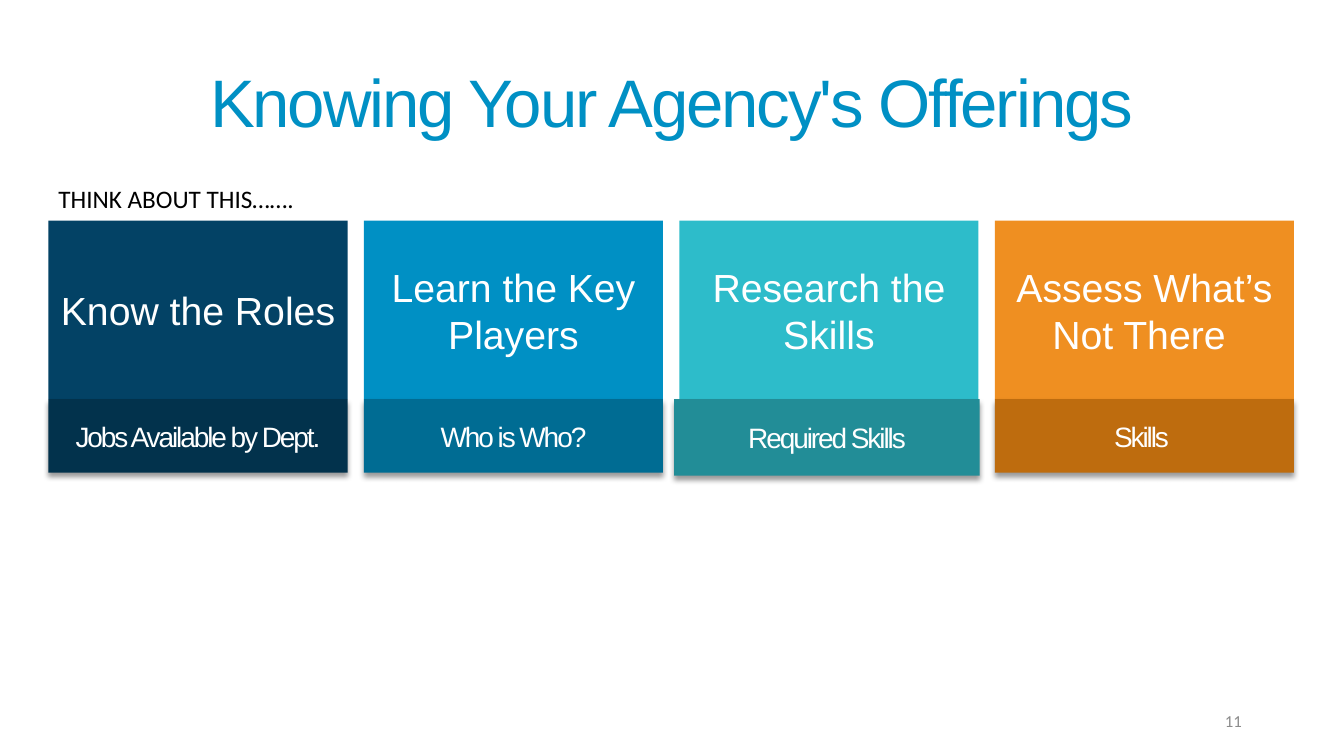
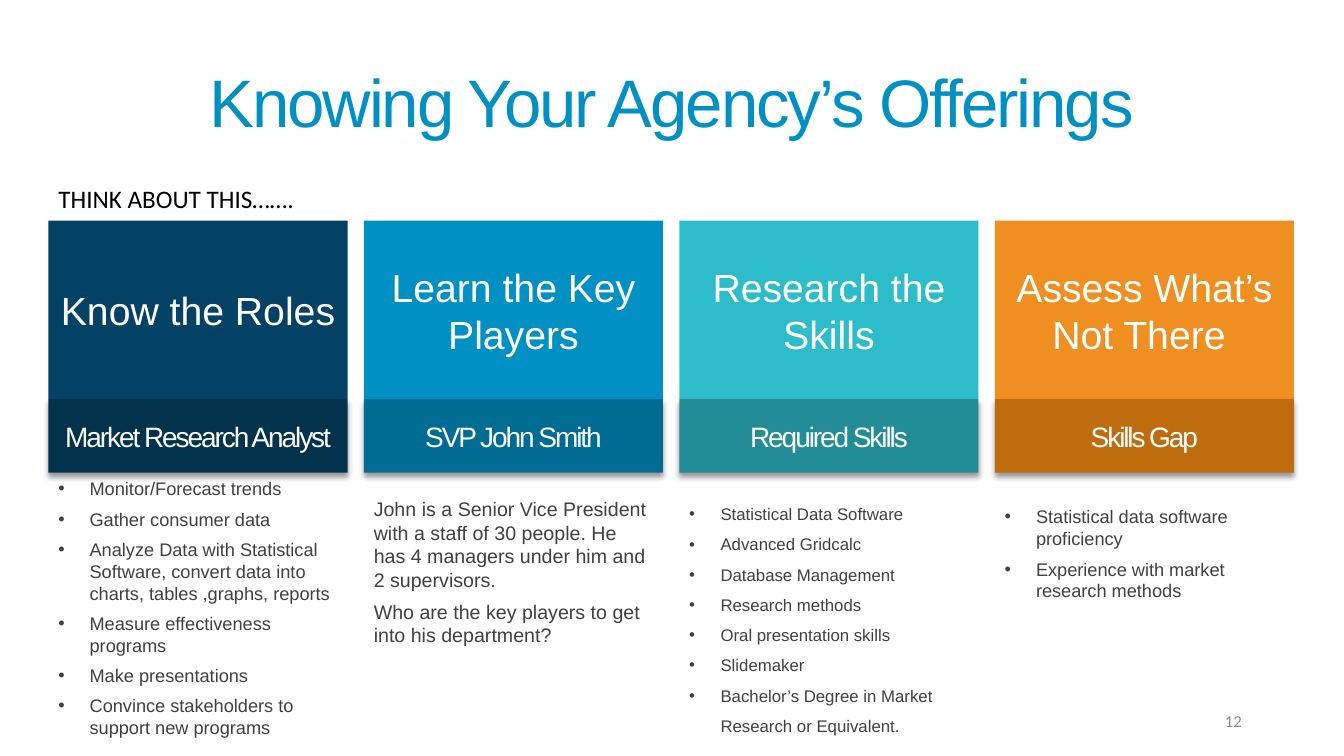
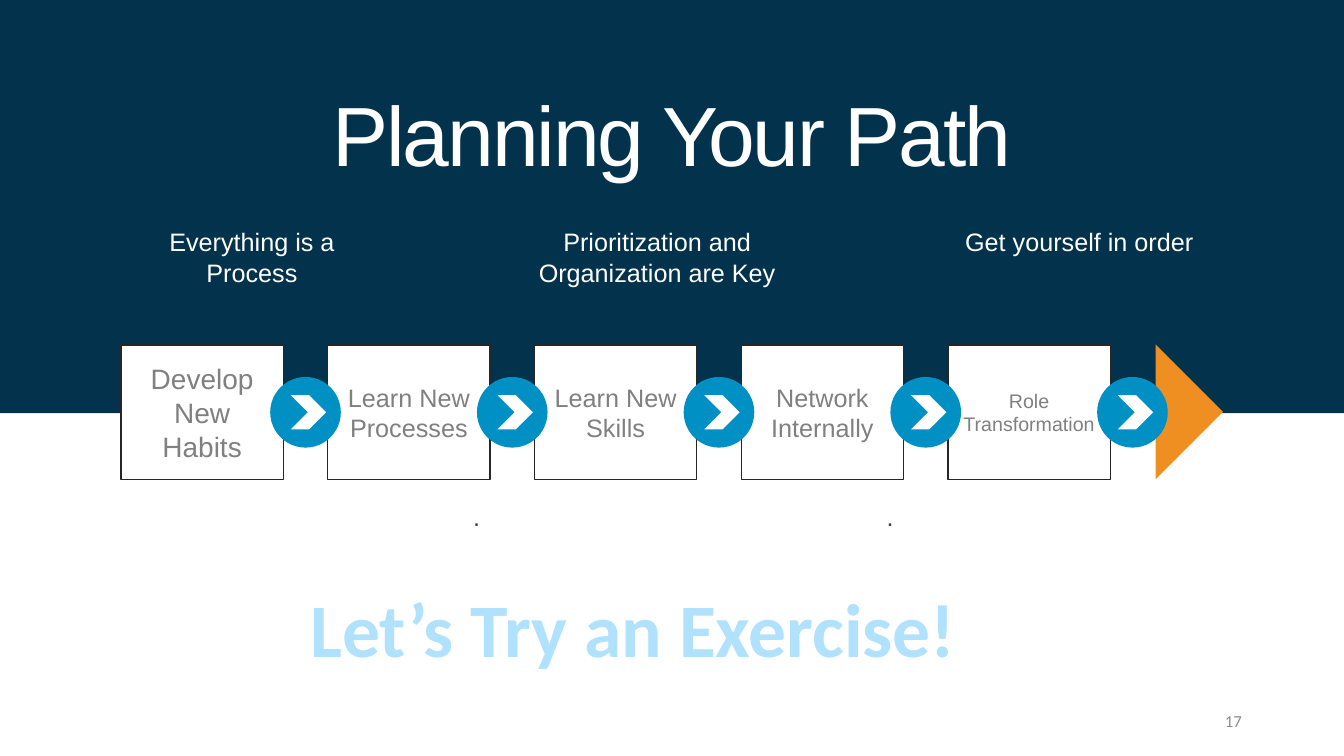
from dataclasses import dataclass
from typing import NamedTuple

from lxml.etree import SubElement
from pptx import Presentation
from pptx.dml.color import RGBColor
from pptx.enum.shapes import MSO_SHAPE
from pptx.enum.text import MSO_ANCHOR, MSO_AUTO_SIZE, PP_ALIGN
from pptx.oxml.ns import qn
from pptx.shapes.autoshape import Shape
from pptx.slide import Slide
from pptx.util import Cm, Pt


@dataclass(frozen=True)
class Theme:
    sans: str = "Arial"
    humanist: str = "Calibri"
    white: str = "FFFFFF"
    black: str = "000000"
    blue: str = "0090C4"
    midnight: str = "02324C"
    orange: str = "EF8F21"
    pale_blue: str = "B0E1FD"
    body: str = "404040"
    muted: str = "808080"
    page: str = "8C8C8C"
    outline: str = "262626"
    card_colors: tuple[str, ...] = ("034265", "0090C4", "2DBCCA", "EF8F21")
    band_colors: tuple[str, ...] = ("02324C", "006C93", "228D97", "BE6C0E")
    title_size: float = 48
    hero_size: float = 60
    call_size: float = 54
    card_size: float = 28
    band_size: float = 20
    lead_size: float = 18
    page_size: float = 12
    tight: float = -1.5


THEME = Theme()


class Box(NamedTuple):
    left: float
    top: float
    width: float
    height: float


@dataclass(frozen=True)
class Style:
    size: float
    color: str
    font: str = THEME.sans
    align: PP_ALIGN = PP_ALIGN.LEFT
    tracking: float = 0
    bold: bool = False
    space_after: float = 0
    line_spacing: float = 1.0
    bullet: bool = False


class Detail(NamedTuple):
    top: float
    height: float
    style: Style
    lines: tuple[str, ...]


class Offering(NamedTuple):
    title: str
    page: int
    bands: tuple[str, ...]
    band_boxes: tuple[Box, ...]
    details: tuple[Detail, ...] = ()


class Step(NamedTuple):
    label: str
    size: float


CENTER = PP_ALIGN.CENTER
TITLE = Style(THEME.title_size, THEME.blue, align=CENTER, tracking=THEME.tight)
HERO = Style(THEME.hero_size, THEME.white, align=CENTER, tracking=THEME.tight)
CARD = Style(THEME.card_size, THEME.white, align=CENTER)
BAND = Style(THEME.band_size, THEME.white, align=CENTER, tracking=THEME.tight)
PROMPT = Style(THEME.lead_size, THEME.black, THEME.humanist)
PAGE = Style(THEME.page_size, THEME.page, THEME.humanist, PP_ALIGN.RIGHT)
THOUGHT = Style(THEME.lead_size, THEME.white, align=CENTER)
DOT = Style(THEME.lead_size, THEME.body, align=PP_ALIGN.RIGHT)
CALL = Style(THEME.call_size, THEME.pale_blue, THEME.humanist, CENTER, bold=True)
DUTY = Style(13, THEME.body, space_after=6, bullet=True)
STORY = Style(14, THEME.body, space_after=6)
SKILL = Style(12, THEME.body, line_spacing=1.5, bullet=True)

SLIDE_WIDTH, SLIDE_HEIGHT = 33.87, 19.05
TITLE_LEFT, TITLE_WIDTH = 3.73, 26.4
COLUMN_LEFT, COLUMN_PITCH, COLUMN_WIDTH = 1.22, 7.95, 7.54
CARD_TOP, CARD_HEIGHT, BAND_HEIGHT = 5.56, 4.5, 1.85
STEP_LEFT, STEP_PITCH, STEP_WIDTH = 3.05, 5.21, 4.09
STEP_TOP, STEP_HEIGHT = 8.69, 3.4
THOUGHT_WIDTH = 6.6

CARDS = (
    "Know the Roles",
    "Learn the Key Players",
    "Research the Skills",
    "Assess What’s Not There ",
)


def column_box(column: int, top: float, height: float) -> Box:
    return Box(COLUMN_LEFT + column * COLUMN_PITCH, top, COLUMN_WIDTH, height)


BAND_BOXES = tuple(
    column_box(column, CARD_TOP + CARD_HEIGHT, BAND_HEIGHT)
    for column in range(len(CARDS))
)

OFFERINGS = (
    Offering(
        "Knowing Your Agency's Offerings",
        11,
        ("Jobs Available by Dept.", "Who is Who?", "Required Skills", "Skills "),
        (*BAND_BOXES[:2], Box(16.99, 10.06, 7.7, 1.93), BAND_BOXES[3]),
    ),
    Offering(
        "Knowing Your Agency’s Offerings",
        12,
        ("Market Research Analyst", "SVP John Smith", "Required Skills", "Skills Gap"),
        BAND_BOXES,
        (
            Detail(11.91, 8.25, DUTY, (
                "Monitor/Forecast trends",
                "Gather consumer data",
                "Analyze Data with Statistical Software, convert data into "
                "charts, tables ,graphs, reports",
                "Measure effectiveness programs",
                "Make presentations",
                "Convince stakeholders to support new programs",
            )),
            Detail(12.4, 4.06, STORY, (
                "John is a Senior Vice President with a staff of 30 people. "
                "He has 4 managers under him and 2 supervisors.",
                "Who are the key players to get into his department?",
            )),
            Detail(12.32, 6.32, SKILL, (
                "Statistical Data Software",
                "Advanced Gridcalc",
                "Database Management",
                "Research methods",
                "Oral presentation skills",
                "Slidemaker",
                "Bachelor’s Degree in Market Research or Equivalent.",
            )),
            Detail(12.62, 2.69, DUTY, (
                "Statistical data software proficiency",
                "Experience with market research methods",
            )),
        ),
    ),
)

STEPS = (
    Step("Develop New Habits", 20),
    Step("Learn New Processes", 18),
    Step("Learn New Skills", 18),
    Step("Network Internally", 18),
    Step("Role Transformation", 14),
)

THOUGHTS = (
    ("Everything is a Process", Box(3.05, 5.59, THOUGHT_WIDTH, 1.8)),
    ("Prioritization and Organization are Key", Box(13.26, 5.59, THOUGHT_WIDTH, 1.8)),
    ("Get yourself in order", Box(23.9, 5.59, THOUGHT_WIDTH, 1.02)),
)


def apply(target: object, values: dict[str, object]) -> None:
    for name, value in values.items():
        setattr(target, name, value)


def write(shape: Shape, lines: tuple[str, ...], style: Style) -> None:
    frame = shape.text_frame
    for index, line in enumerate(lines):
        paragraph = frame.paragraphs[0] if index == 0 else frame.add_paragraph()
        apply(paragraph, {
            "alignment": style.align,
            "space_after": Pt(style.space_after),
            "line_spacing": style.line_spacing,
        })
        if style.bullet:
            properties = paragraph._p.get_or_add_pPr()
            properties.set("marL", str(Cm(0.79)))
            properties.set("indent", str(Cm(-0.79)))
            SubElement(properties, qn("a:buFont"), typeface=THEME.sans)
            SubElement(properties, qn("a:buChar"), char="•")
        run = paragraph.add_run()
        run.text = line
        apply(run.font, {
            "name": style.font,
            "size": Pt(style.size),
            "bold": style.bold,
        })
        run.font.color.rgb = RGBColor.from_string(style.color)
        if style.tracking:
            run._r.get_or_add_rPr().set("spc", str(round(style.tracking * 100)))


def add_text(
    slide: Slide,
    box: Box,
    lines: tuple[str, ...],
    style: Style,
    wrap: bool = True,
    anchor: MSO_ANCHOR = MSO_ANCHOR.TOP,
    fit: MSO_AUTO_SIZE = MSO_AUTO_SIZE.SHAPE_TO_FIT_TEXT,
) -> None:
    area = slide.shapes.add_textbox(*map(Cm, box))
    apply(area.text_frame, {
        "word_wrap": wrap,
        "vertical_anchor": anchor,
        "auto_size": fit,
    })
    write(area, lines, style)


def add_block(
    slide: Slide,
    box: Box,
    fill: str,
    kind: MSO_SHAPE = MSO_SHAPE.RECTANGLE,
    outline: str | None = None,
) -> Shape:
    block = slide.shapes.add_shape(kind, *map(Cm, box))
    block.shadow.inherit = False
    block.fill.solid()
    block.fill.fore_color.rgb = RGBColor.from_string(fill)
    if outline:
        block.line.width = Pt(1)
        block.line.color.rgb = RGBColor.from_string(outline)
    else:
        block.line.fill.background()
    return block


def add_label(block: Shape, label: str, style: Style) -> None:
    apply(block.text_frame, {
        "word_wrap": True,
        "vertical_anchor": MSO_ANCHOR.MIDDLE,
    })
    write(block, (label,), style)


def cast_shadow(block: Shape) -> None:
    effects = block._element.spPr.find(qn("a:effectLst"))
    shadow = SubElement(
        effects, qn("a:outerShdw"), blurRad=str(Pt(4)), dist=str(Pt(3)),
        dir="5400000", algn="t", rotWithShape="0",
    )
    color = SubElement(shadow, qn("a:srgbClr"), val=THEME.black)
    SubElement(color, qn("a:alpha"), val="40000")


def add_page_number(slide: Slide, page: int) -> None:
    add_text(
        slide, Box(23.93, 17.65, 7.62, 1.02), (str(page),), PAGE,
        anchor=MSO_ANCHOR.MIDDLE, fit=MSO_AUTO_SIZE.NONE,
    )


def draw_offering(slide: Slide, offering: Offering) -> None:
    for column, (card, color) in enumerate(zip(CARDS, THEME.card_colors)):
        box = column_box(column, CARD_TOP, CARD_HEIGHT)
        add_label(add_block(slide, box, color), card, CARD)
    for band, box, color in zip(
        offering.bands, offering.band_boxes, THEME.band_colors
    ):
        block = add_block(slide, box, color)
        cast_shadow(block)
        add_label(block, band, BAND)
    for column, detail in enumerate(offering.details):
        box = column_box(column, detail.top, detail.height)
        add_text(slide, box, detail.lines, detail.style)
    add_text(slide, Box(TITLE_LEFT, 1.4, TITLE_WIDTH, 2.31), (offering.title,), TITLE)
    add_text(slide, Box(1.22, 4.5, 6.96, 1.02), ("THINK ABOUT THIS…….",), PROMPT)
    add_page_number(slide, offering.page)


def draw_path(slide: Slide) -> None:
    add_block(slide, Box(0, 0, SLIDE_WIDTH, 10.41), THEME.midnight)
    add_text(
        slide, Box(TITLE_LEFT, 1.96, TITLE_WIDTH, 2.82), ("Planning Your Path",), HERO
    )
    goal = add_block(
        slide, Box(28.27, 9.53, 3.4, 1.7), THEME.orange, MSO_SHAPE.ISOSCELES_TRIANGLE
    )
    goal.rotation = 90
    lefts = [STEP_LEFT + index * STEP_PITCH for index in range(len(STEPS))]
    for left, step in zip(lefts, STEPS):
        box = Box(left, STEP_TOP, STEP_WIDTH, STEP_HEIGHT)
        block = add_block(slide, box, THEME.white, outline=THEME.outline)
        add_label(block, step.label, Style(step.size, THEME.muted, align=CENTER))
    for left in lefts:
        add_block(
            slide, Box(left + 3.76, 9.5, 1.78, 1.78), THEME.blue, MSO_SHAPE.OVAL
        )
        add_block(
            slide, Box(left + 4.28, 9.96, 0.89, 0.86), THEME.white, MSO_SHAPE.CHEVRON
        )
    for left in lefts[1::2]:
        dot_left = left + STEP_WIDTH - THOUGHT_WIDTH
        add_text(slide, Box(dot_left, 12.5, THOUGHT_WIDTH, 1.02), (".",), DOT)
    for thought, box in THOUGHTS:
        add_text(slide, box, (thought,), THOUGHT)
    add_text(
        slide, Box(7.49, 14.53, 17.37, 2.57), ("Let’s Try an Exercise! ",), CALL,
        wrap=False,
    )
    add_page_number(slide, 17)


def main() -> None:
    deck = Presentation()
    apply(deck, {"slide_width": Cm(SLIDE_WIDTH), "slide_height": Cm(SLIDE_HEIGHT)})
    blank = deck.slide_layouts[6]
    for offering in OFFERINGS:
        draw_offering(deck.slides.add_slide(blank), offering)
    draw_path(deck.slides.add_slide(blank))
    deck.save("out.pptx")


if __name__ == "__main__":
    main()
